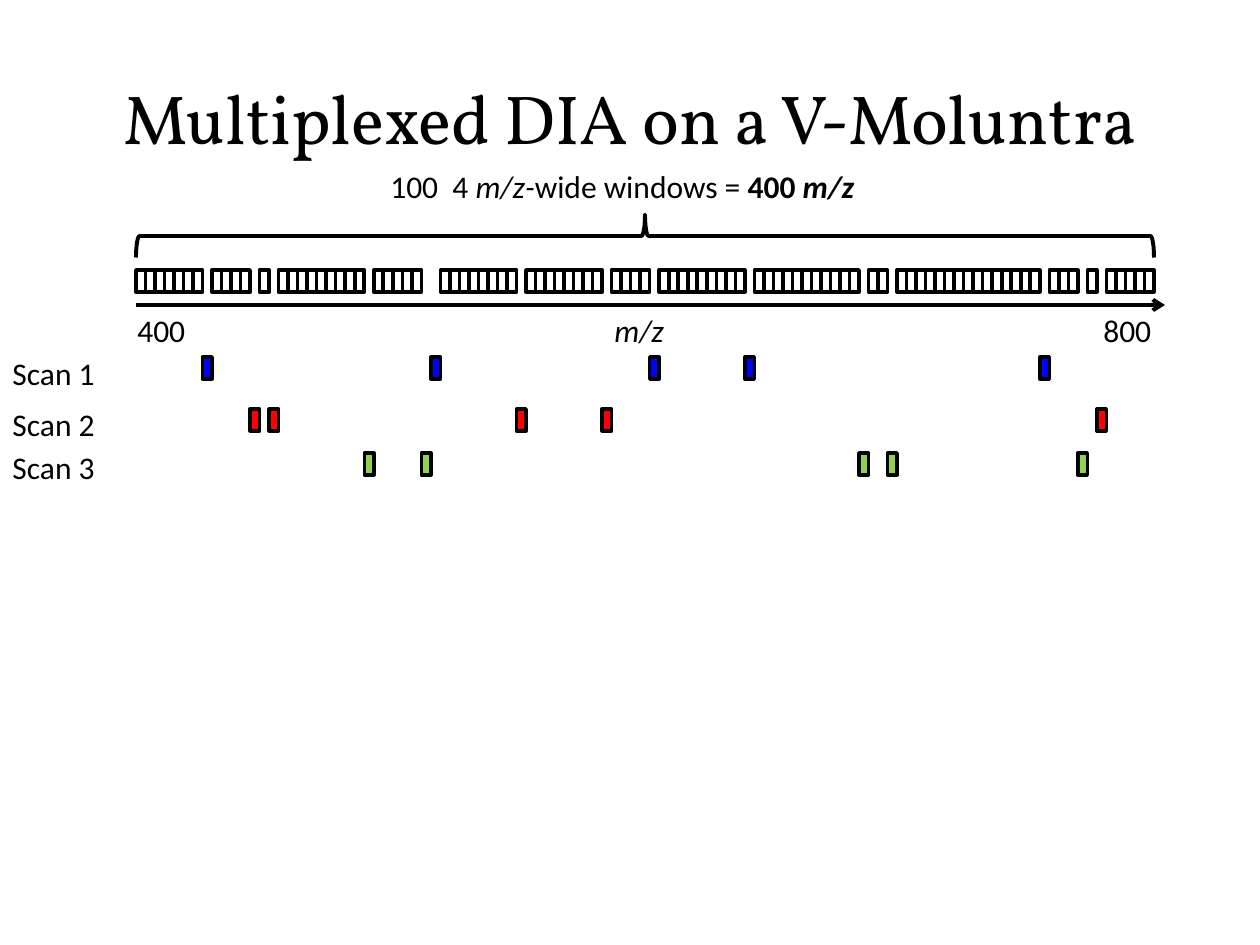
from dataclasses import dataclass

from lxml import etree
from pptx import Presentation
from pptx.dml.color import RGBColor
from pptx.enum.shapes import MSO_CONNECTOR, MSO_SHAPE
from pptx.enum.text import MSO_ANCHOR, MSO_AUTO_SIZE, PP_ALIGN
from pptx.oxml.ns import qn
from pptx.util import Emu, Pt


@dataclass(frozen=True)
class Theme:
    ink: str = "000000"
    window: str = "FFFFFF"
    blue: str = "0000FF"
    red: str = "FF0000"
    green: str = "92D050"
    title_font: str = "Vollkorn"
    body_font: str = "Calibri"
    title_size: float = 39.6
    body_size: float = 18
    window_line: float = 2
    axis_line: float = 2.25


THEME = Theme()

TITLE = "Multiplexed DIA on a V-Moluntra"
# Each run is its text and its style: "i" italic, "b" bold.
CAPTION = [("100  4 ", ""), ("m/z-", "i"), ("wide windows = ", ""),
           ("400 ", "b"), ("m/z", "bi")]
# Text, style, left, width
AXIS_LABELS = [("400", "", 125, 74), ("m/z", "i", 602, 76), ("800", "", 1091, 74)]
# Label, colour, label top, window top, window slots
SCANS = [
    ("Scan 1", THEME.blue, 348, 357, (7, 31, 54, 64, 95)),
    ("Scan 2", THEME.red, 399, 409, (12, 14, 40, 49, 101)),
    ("Scan 3", THEME.green, 442, 453, (24, 30, 76, 79, 99)),
]

# Lengths in px, 126 to the inch
SLIDE_WIDTH, SLIDE_HEIGHT = 1260, 945
SLOT_COUNT = 107
AXIS_LEFT, AXIS_LENGTH, AXIS_Y = 136, 1018, 305
ARROW_END = 1165
WINDOW_TOP, WINDOW_HEIGHT = 270, 22
BRACE_DEPTH, BRACE_MIDDLE = 43, 236
LABEL_HEIGHT, SCAN_LABEL_WIDTH = 51, 110


def px(length):
    return Emu(round(length * 914400 / 126))


def box(*lengths):
    return [px(length) for length in lengths]


def colour(code):
    return RGBColor.from_string(code)


def write(frame, runs, font=THEME.body_font, size=THEME.body_size,
          ink=THEME.ink, align=PP_ALIGN.LEFT):
    paragraph = frame.paragraphs[0]
    paragraph.alignment = align
    for words, style in runs:
        run = paragraph.add_run()
        run.text = words
        run.font.name = font
        run.font.size = Pt(size)
        run.font.color.rgb = colour(ink)
        run.font.bold = "b" in style
        run.font.italic = "i" in style


def add_label(slide, runs, place, wrap=False):
    frame = slide.shapes.add_textbox(*box(*place)).text_frame
    frame.word_wrap = wrap
    frame.auto_size = MSO_AUTO_SIZE.SHAPE_TO_FIT_TEXT
    write(frame, runs)


def add_windows(shapes, slots, top, fill):
    """Draw one isolation window in each of the given slots of the m/z axis."""
    pitch = AXIS_LENGTH / SLOT_COUNT
    for slot in slots:
        window = shapes.add_shape(
            MSO_SHAPE.RECTANGLE,
            *box(AXIS_LEFT + slot * pitch, top, pitch, WINDOW_HEIGHT))
        window.shadow.inherit = False
        window.fill.solid()
        window.fill.fore_color.rgb = colour(fill)
        window.line.color.rgb = colour(THEME.ink)
        window.line.width = Pt(THEME.window_line)


def add_brace(slide):
    """Draw a left brace turned a quarter so that its tip points up."""
    left = AXIS_LEFT + AXIS_LENGTH / 2 - BRACE_DEPTH / 2
    top = BRACE_MIDDLE - AXIS_LENGTH / 2
    brace = slide.shapes.add_shape(
        MSO_SHAPE.LEFT_BRACE, *box(left, top, BRACE_DEPTH, AXIS_LENGTH))
    brace.rotation = 90
    brace.shadow.inherit = False
    brace.fill.background()
    brace.line.color.rgb = colour(THEME.ink)
    brace.line.width = Pt(THEME.axis_line)


def add_axis(slide):
    axis = slide.shapes.add_connector(
        MSO_CONNECTOR.STRAIGHT, *box(AXIS_LEFT, AXIS_Y, ARROW_END, AXIS_Y))
    axis.line.color.rgb = colour(THEME.ink)
    axis.line.width = Pt(THEME.axis_line)
    properties = axis._element.spPr
    etree.SubElement(properties.find(qn("a:ln")), qn("a:tailEnd"), type="arrow")
    etree.SubElement(properties, qn("a:effectLst"))


def main():
    deck = Presentation()
    deck.slide_width, deck.slide_height = box(SLIDE_WIDTH, SLIDE_HEIGHT)
    slide = deck.slides.add_slide(deck.slide_layouts[5])

    title = slide.shapes.title
    title.left, title.top, title.width, title.height = box(63, 38, 1134, 157)
    title.text_frame.vertical_anchor = MSO_ANCHOR.MIDDLE
    write(title.text_frame, [(TITLE, "")], font=THEME.title_font,
          size=THEME.title_size, align=PP_ALIGN.CENTER)

    add_brace(slide)
    add_label(slide, CAPTION, (378, 161, 528, LABEL_HEIGHT), wrap=True)
    add_axis(slide)
    for words, style, left, width in AXIS_LABELS:
        add_label(slide, [(words, style)], (left, AXIS_Y, width, LABEL_HEIGHT))

    scanned = set()
    for label, fill, label_top, window_top, slots in SCANS:
        add_label(slide, [(label, "")],
                  (0, label_top, SCAN_LABEL_WIDTH, LABEL_HEIGHT))
        add_windows(slide.shapes.add_group_shape().shapes, slots, window_top, fill)
        scanned.update(slots)

    waiting = [slot for slot in range(SLOT_COUNT) if slot not in scanned]
    add_windows(slide.shapes, waiting, WINDOW_TOP, THEME.window)

    deck.save("out.pptx")


if __name__ == "__main__":
    main()
